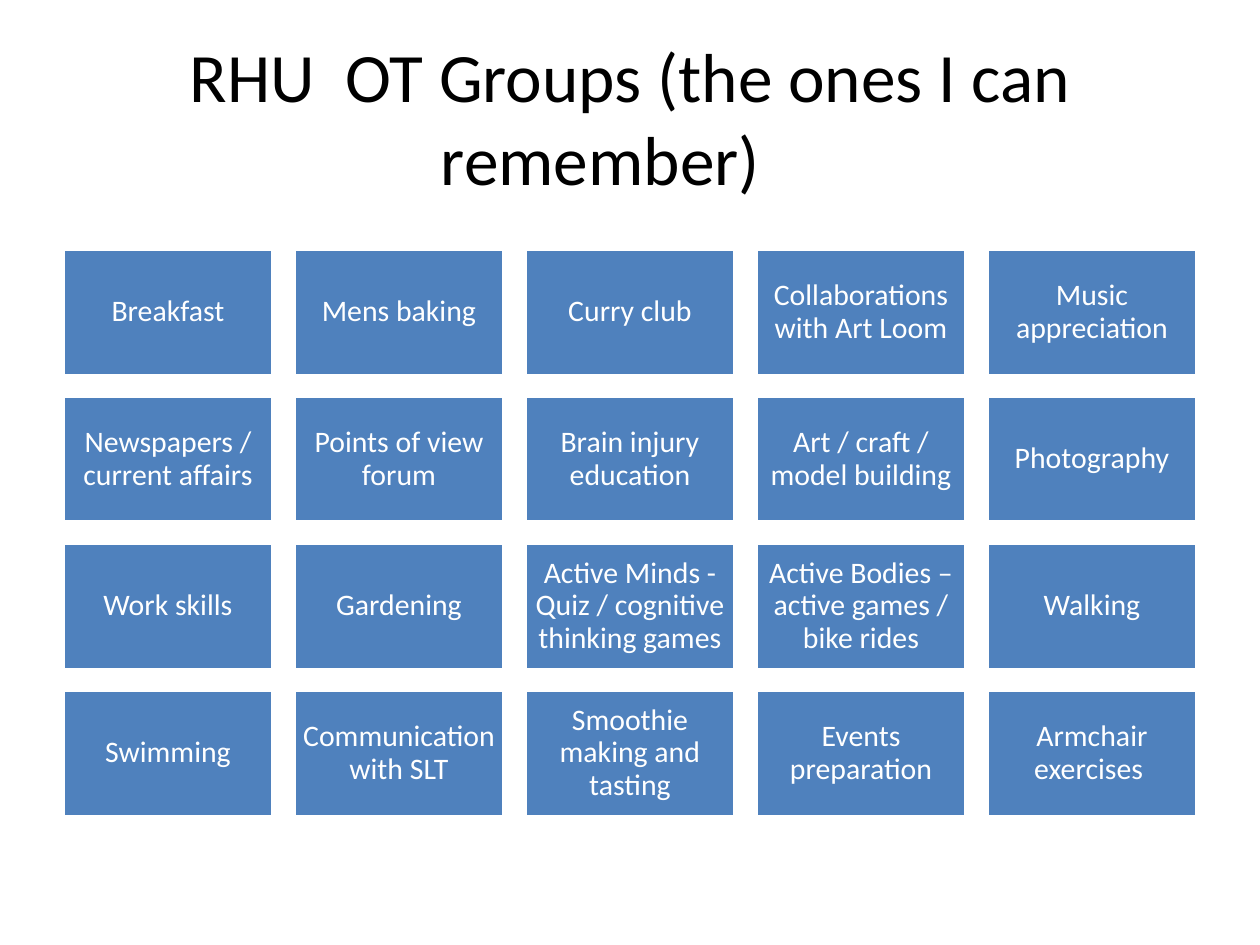
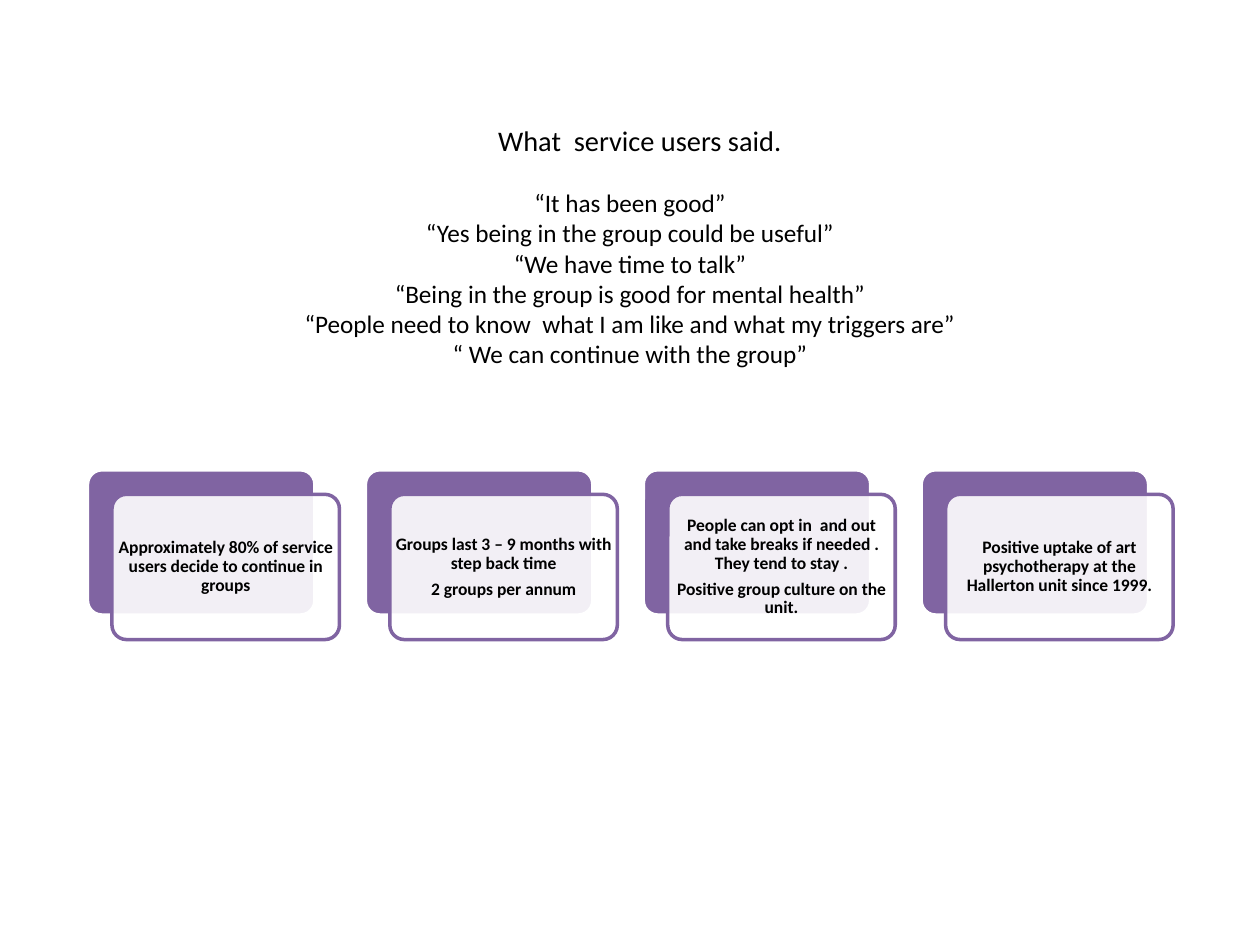
from dataclasses import dataclass

from lxml import etree
from pptx import Presentation
from pptx.dml.color import RGBColor
from pptx.enum import shapes, text
from pptx.oxml import ns
from pptx.util import Pt


@dataclass(frozen=True)
class Theme:
    font: str = "Calibri"
    black: str = "000000"
    white: str = "FFFFFF"
    blue: str = "4F81BD"
    purple: str = "8064A2"
    title: float = 39.6
    lead: float = 16.2
    quote: float = 14.4
    tile: float = 17
    card: float = 10
    line: float = 2


GROUPS = [
    ["Breakfast", "Mens baking", "Curry club",
     "Collaborations with Art Loom", "Music appreciation"],
    ["Newspapers / current affairs", "Points of view forum",
     "Brain injury education", "Art / craft / model building", "Photography"],
    ["Work skills", "Gardening",
     "Active Minds - Quiz / cognitive thinking games",
     "Active Bodies – active games / bike rides", "Walking"],
    ["Swimming", "Communication with SLT", "Smoothie making and tasting",
     "Events preparation", "Armchair exercises "],
]

QUOTES = [
    "“It has been good”",
    "“Yes being in the group could be useful”",
    "“We have time to talk”",
    "“Being in the group is good for mental health”",
    "“People need to know  what I am like and what my triggers are”",
    "“ We can continue with the group”",
]

FACTS = [
    ["Approximately 80% of service users decide to continue in groups"],
    ["Groups last 3 – 9 months with step back time", "2 groups per annum"],
    ["People can opt in  and out and take breaks if needed . They tend to stay .",
     "Positive group culture on the unit."],
    ["Positive uptake of art psychotherapy at the Hallerton unit since 1999."],
]


class Deck:
    def __init__(self, theme):
        self.theme = theme
        self.prs = Presentation()
        self.prs.slide_width, self.prs.slide_height = Pt(720), Pt(540)
        self.slide = None

    def page(self):
        self.slide = self.prs.slides.add_slide(self.prs.slide_layouts[6])

    def label(self, shape, lines, size, color, bold=False, pad=None,
              space=None, after=0):
        """Fill a shape with centred paragraphs; pad is the side margin."""
        frame = shape.text_frame
        frame.word_wrap = True
        frame.vertical_anchor = text.MSO_ANCHOR.MIDDLE
        if pad is not None:
            frame.margin_left = frame.margin_right = Pt(pad)
        for i, line in enumerate(lines):
            para = frame.add_paragraph() if i else frame.paragraphs[0]
            para.text = line
            para.alignment = text.PP_ALIGN.CENTER
            para.line_spacing = space
            para.space_after = Pt(after)
            font = para.font
            font.name, font.size, font.bold = self.theme.font, Pt(size), bold
            font.color.rgb = RGBColor.from_string(color)
        return frame.paragraphs

    def title(self, box, lines, size):
        shape = self.slide.shapes.add_textbox(*map(Pt, box))
        return self.label(shape, lines, size, self.theme.black)

    def block(self, kind, box, fill, line, alpha=None):
        shape = self.slide.shapes.add_shape(kind, *map(Pt, box))
        shape.shadow.inherit = False
        shape.fill.solid()
        shape.fill.fore_color.rgb = RGBColor.from_string(fill)
        shape.line.color.rgb = RGBColor.from_string(line)
        shape.line.width = Pt(self.theme.line)
        if alpha:
            tint = shape.element.spPr.find(ns.qn("a:solidFill"))[0]
            etree.SubElement(tint, ns.qn("a:alpha"), val=str(alpha * 1000))
        return shape

    def tile(self, box, name):
        look = self.theme
        shape = self.block(shapes.MSO_SHAPE.RECTANGLE, box, look.blue, look.white)
        self.label(shape, [name], look.tile, look.white, pad=4.5, space=0.9)

    def card(self, left, top, lines):
        """Draw a solid plate with a translucent text plate shifted over it."""
        look = self.theme
        wide, high, shift = 130, 83, 14
        kind = shapes.MSO_SHAPE.ROUNDED_RECTANGLE
        back = self.block(kind, (left, top, wide, high), look.purple, look.white)
        front = self.block(kind, (left + shift, top + shift, wide, high),
                           look.white, look.purple, alpha=90)
        for plate in (back, front):
            plate.adjustments[0] = 0.1
        self.label(front, lines, look.card, look.black, bold=True, pad=0.5,
                   space=0.9, after=4)


def groups(deck):
    deck.page()
    deck.title((36, 21.6, 648, 90),
               ["RHU  OT Groups (the ones I can remember)\t"], deck.theme.title)
    wide, high, gap = 120, 72, 12
    for row, names in enumerate(GROUPS):
        for col, name in enumerate(names):
            left, top = 36 + col * (wide + gap), 142.5 + row * (high + gap)
            deck.tile((left, top, wide, high), name)


def views(deck):
    deck.page()
    lead, *_ = deck.title(
        (50, 74, 620, 133), ["What  service users said.", *QUOTES],
        deck.theme.quote)
    lead.font.size = Pt(deck.theme.lead)
    lead.space_after = Pt(17.5)
    lead._p.get_or_add_pPr().set("marL", str(Pt(11)))
    for i, lines in enumerate(FACTS):
        deck.card(50 + i * 158.8, 268.5, lines)


def main():
    deck = Deck(Theme())
    groups(deck)
    views(deck)
    deck.prs.save("out.pptx")


if __name__ == "__main__":
    main()
